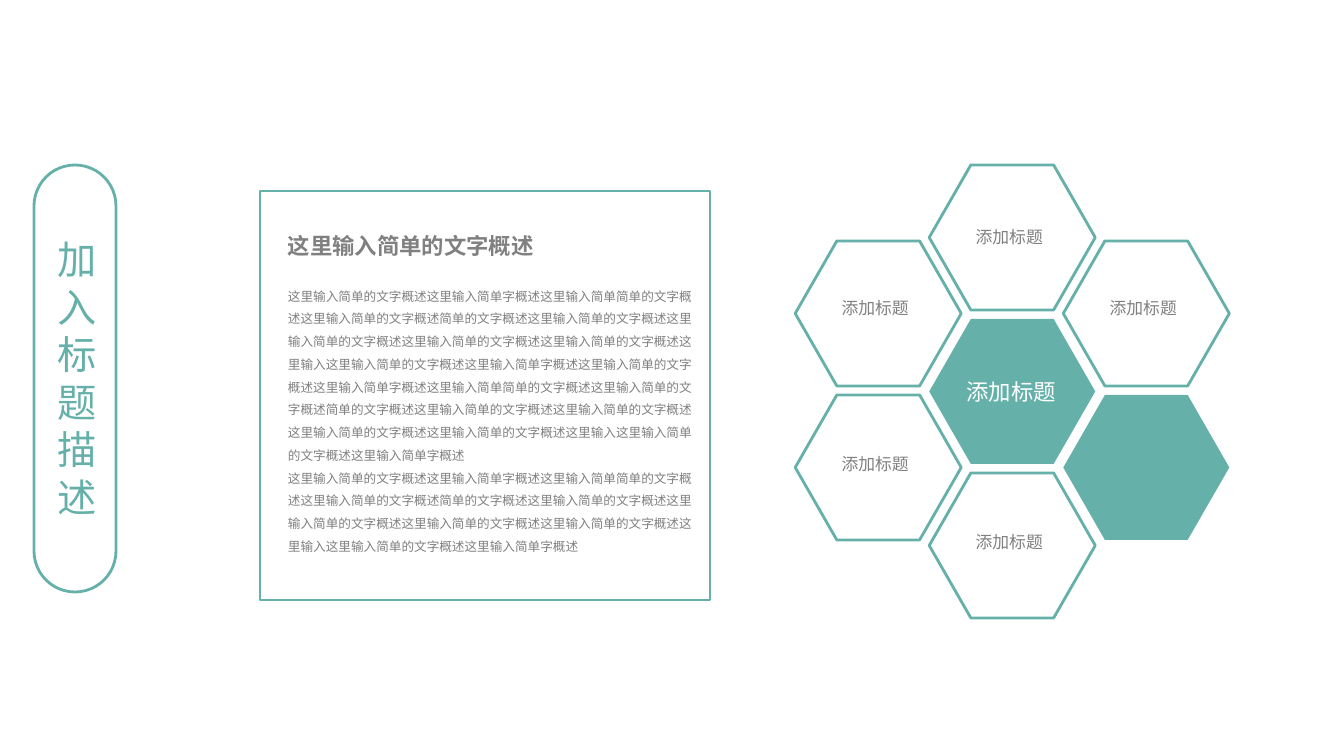
"""Build a slide with a vertical title, a text card and a honeycomb of labels."""
from dataclasses import dataclass

from lxml import etree
from pptx import Presentation
from pptx.dml.color import RGBColor
from pptx.enum.shapes import MSO_SHAPE
from pptx.enum.text import MSO_ANCHOR, MSO_AUTO_SIZE, PP_ALIGN
from pptx.oxml.ns import qn
from pptx.util import Inches, Pt

HEXAGON = MSO_SHAPE.HEXAGON
RECTANGLE = MSO_SHAPE.RECTANGLE
ROUNDED = MSO_SHAPE.ROUNDED_RECTANGLE
TOP, MIDDLE = MSO_ANCHOR.TOP, MSO_ANCHOR.MIDDLE
LEFT, CENTER = PP_ALIGN.LEFT, PP_ALIGN.CENTER
NO_AUTOFIT = MSO_AUTO_SIZE.NONE

EMU_PER_PX = 914400 / 100.8
TITLE_ONLY = 5


@dataclass(frozen=True)
class Theme:
    """Colours, fonts and type sizes of the slide."""
    teal: RGBColor = RGBColor(0x66, 0xB0, 0xAA)
    gray: RGBColor = RGBColor(0x80, 0x80, 0x80)
    white: RGBColor = RGBColor(0xFF, 0xFF, 0xFF)
    font: str = "Noto Sans CJK SC"
    latin: str = "Calibri"
    title: int = 28
    heading: int = 16
    label: int = 12
    body: int = 9


THEME = Theme()

TITLE = "加入标题描述"
HEADING = "这里输入简单的文字概述"
LABEL = "添加标题"
SENTENCE = (
    "这里输入简单的文字概述这里输入简单字概述这里输入简单简单的文字概述"
    "这里输入简单的文字概述简单的文字概述这里输入简单的文字概述"
    "这里输入简单的文字概述这里输入简单的文字概述这里输入简单的文字概述"
    "这里输入这里输入简单的文字概述这里输入简单字概述"
)
BODY = [SENTENCE * 2, SENTENCE]

COLUMN_LEFTS = [795, 929, 1063]
COLUMN_TOPS = [241, 165, 241]
ROW_PITCH = 154
HEXAGON_SIZE = (166, 145)
OUTLINED_CELLS = [(1, 0, 56), (2, 0, 51), (0, 0, 51), (0, 1, 53), (1, 2, 53)]
FILLED_CELLS = [(2, 1), (1, 1)]


def px(*lengths):
    """Turn pixel lengths into EMU."""
    return [round(length * EMU_PER_PX) for length in lengths]


def apply(target, values):
    """Set every attribute named in values on target."""
    for name, value in values.items():
        setattr(target, name, value)


def add_outline(slide, kind, box, width=None, adjustment=None):
    """Add a teal shape, outlined when a line width is given, else filled."""
    shape = slide.shapes.add_shape(kind, *px(*box))
    shape.shadow.inherit = False
    if adjustment is not None:
        shape.adjustments[0] = adjustment
    if width:
        shape.fill.background()
        shape.line.color.rgb = THEME.teal
        shape.line.width = Pt(width)
    else:
        shape.fill.solid()
        shape.fill.fore_color.rgb = THEME.teal
        shape.line.fill.background()


def write_text(shape, texts, size, color, align=LEFT, anchor=TOP,
               spacing=1.0, bold=False, font=THEME.font):
    """Write formatted paragraphs into a shape."""
    frame = shape.text_frame
    apply(frame, {"word_wrap": True, "auto_size": NO_AUTOFIT,
                  "vertical_anchor": anchor, "text": "\n".join(texts)})
    for paragraph in frame.paragraphs:
        apply(paragraph, {"alignment": align, "line_spacing": spacing})
        for run in paragraph.runs:
            apply(run.font, {"name": font, "size": Pt(size), "bold": bold})
            run.font.color.rgb = color
            properties = run.font._element
            east_asian = etree.SubElement(properties, qn("a:ea"))
            east_asian.set("typeface", THEME.font)


def add_text(slide, box, texts, size, color, **options):
    """Add a text box holding the given paragraphs."""
    text_box = slide.shapes.add_textbox(*px(*box))
    write_text(text_box, texts, size, color, **options)


def add_title(slide):
    """Set the title vertically inside a pill outline."""
    add_outline(slide, ROUNDED, (34, 165, 82, 427), 2, 0.5)
    title = slide.shapes.title
    left, top, width, height = px(41, 235, 68, 298)
    apply(title, {"left": left, "top": top, "width": width, "height": height})
    write_text(title, [TITLE], THEME.title, THEME.teal, align=CENTER)
    frame = title.text_frame
    frame._txBody.bodyPr.set("vert", "eaVert")
    frame.paragraphs[0].runs[0].font._element.set("spc", "600")


def add_card(slide):
    """Add the framed heading and body text."""
    add_outline(slide, RECTANGLE, (260, 191, 450, 409), 1)
    add_text(slide, (278, 276, 435, 305), BODY, THEME.body, THEME.gray,
             spacing=1.5)
    add_text(slide, (278, 227, 420, 37), [HEADING], THEME.heading, THEME.gray,
             bold=True)


def cell_origin(column, row):
    """Return the left and top of a honeycomb cell."""
    return COLUMN_LEFTS[column], COLUMN_TOPS[column] + row * ROW_PITCH


def add_honeycomb(slide):
    """Add the hexagons and their labels."""
    for column, row in FILLED_CELLS:
        add_outline(slide, HEXAGON, (*cell_origin(column, row), *HEXAGON_SIZE),
                    adjustment=0.287)
    for column, row, offset in OUTLINED_CELLS:
        left, top = cell_origin(column, row)
        add_outline(slide, HEXAGON, (left, top, *HEXAGON_SIZE), 2, 0.287)
        add_text(slide, (left + 22, top + offset, 116, 32), [LABEL],
                 THEME.label, THEME.gray, align=CENTER, anchor=MIDDLE)
    left, top = cell_origin(1, 1)
    add_text(slide, (left + 24, top + 37, 116, 71), [LABEL], THEME.heading,
             THEME.white, align=CENTER, anchor=MIDDLE, font=THEME.latin)


def main():
    """Build and save the presentation."""
    presentation = Presentation()
    apply(presentation, {"slide_width": Inches(13.33),
                         "slide_height": Inches(7.5)})
    slide = presentation.slides.add_slide(
        presentation.slide_layouts[TITLE_ONLY])
    add_title(slide)
    add_honeycomb(slide)
    add_card(slide)
    presentation.save("out.pptx")


if __name__ == "__main__":
    main()
